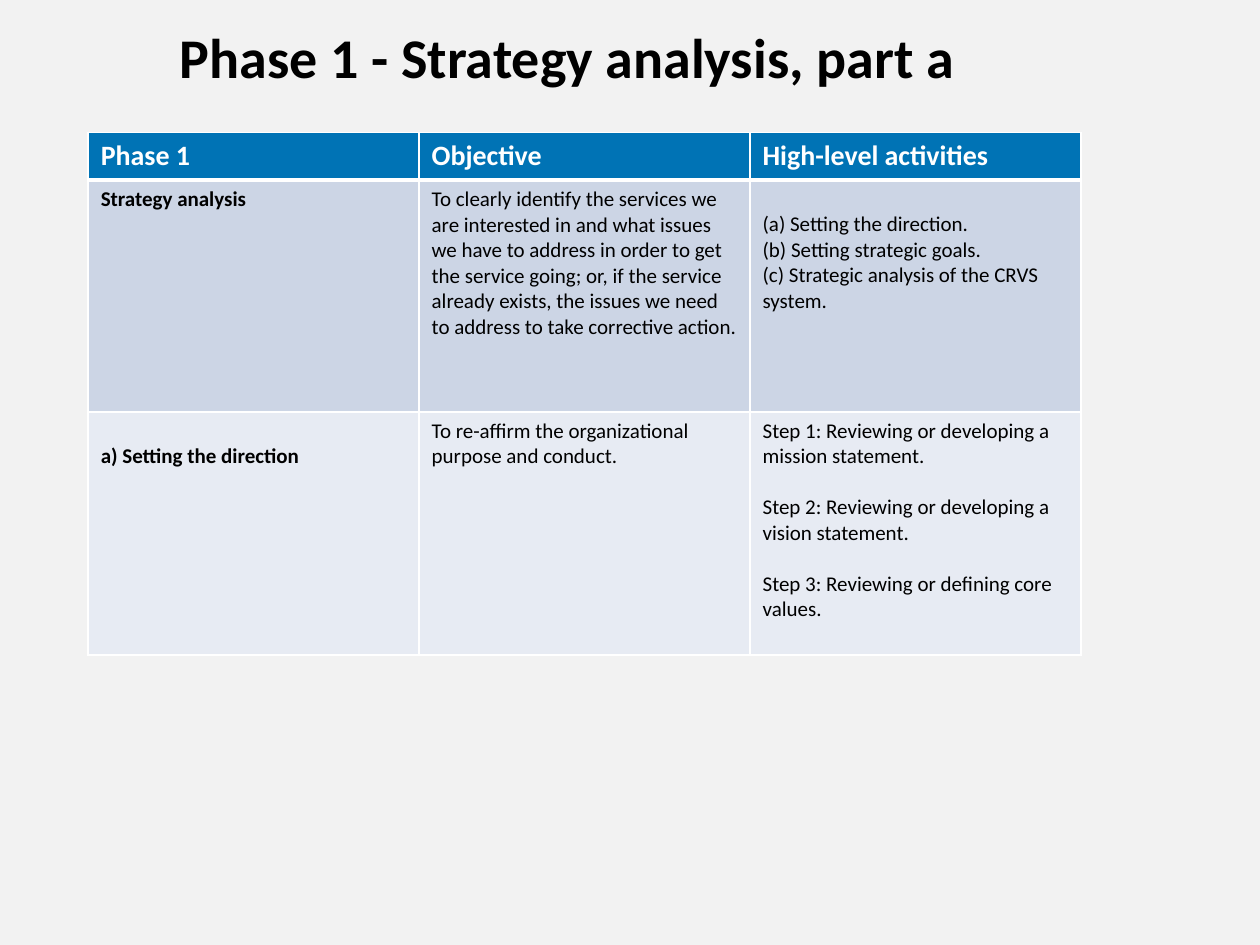
import pptx
import pptx.dml.color
import pptx.oxml
import pptx.oxml.ns
import pptx.util

Inches, Pt = pptx.util.Inches, pptx.util.Pt
RGBColor = pptx.dml.color.RGBColor

FONT = "Calibri"
BACKGROUND = RGBColor(0xF2, 0xF2, 0xF2)
BLACK = RGBColor(0, 0, 0)
WHITE = RGBColor(0xFF, 0xFF, 0xFF)
HEADER_BLUE = RGBColor(0x00, 0x73, 0xB5)
BAND_DARK = RGBColor(0xCC, 0xD5, 0xE5)
BAND_LIGHT = RGBColor(0xE7, 0xEB, 0xF3)

LINE = 0.2  # height of one 12 pt line, in inches
ROW_HEIGHTS = [0.38, 1.84, 1.93]
ROW_FILLS = [HEADER_BLUE, BAND_DARK, BAND_LIGHT]

# Each cell is a list of paragraphs
ROWS = [
    [["Phase 1"], ["Objective"], ["High-level activities"]],
    [
        ["Strategy analysis"],
        ["To clearly identify the services we are interested in and what "
         "issues we have to address in order to get the service going; or, "
         "if the service already exists, the issues we need to address to "
         "take corrective action."],
        ["(a) Setting the direction.",
         "(b) Setting strategic goals.",
         "(c) Strategic analysis of the CRVS system."],
    ],
    [
        ["a) Setting the direction"],
        ["To re-affirm the organizational purpose and conduct."],
        ["Step 1: Reviewing or developing a mission statement.",
         "Step 2: Reviewing or developing a vision statement.",
         "Step 3: Reviewing or defining core values."],
    ],
]
LOWERED_CELLS = {(1, 2), (2, 0)}  # text starts one line down
SPACED_CELL = (2, 2)  # one line between steps


def format_run(r, size, color, bold):
    r.font.name = FONT
    r.font.size = Pt(size)
    r.font.color.rgb = color
    r.font.bold = bold


def set_borders(cell, widths):
    """Draw white borders; widths are in points: left, right, top, bottom."""
    tc_pr = cell._tc.get_or_add_tcPr()
    for side, width in zip("LRTB", widths):
        tc_pr.append(pptx.oxml.parse_xml(
            f'<a:ln{side} {pptx.oxml.ns.nsdecls("a")} w="{Pt(width)}">'
            f'<a:solidFill><a:srgbClr val="{WHITE}"/></a:solidFill>'
            f'</a:ln{side}>'))


def add_title(slide, left, top, width, height):
    sp = slide.shapes.add_textbox(left, top, width, height)
    tf = sp.text_frame
    tf.word_wrap = False
    tf.text = "Phase 1 - Strategy analysis, part a"
    format_run(tf.paragraphs[0].runs[0], 32, BLACK, True)


def fill_cell(cell, row, col, paragraphs):
    header = row == 0
    # The header rule is heavier, on both sides of the shared edge
    set_borders(cell, [1, 1, 3 if row == 1 else 1, 3 if header else 1])
    cell.fill.solid()
    cell.fill.fore_color.rgb = ROW_FILLS[row]
    if (row, col) in LOWERED_CELLS:
        cell.margin_top = Inches(0.05 + LINE)

    tf = cell.text_frame
    tf.text = "\n".join(paragraphs)
    for i, p in enumerate(tf.paragraphs):
        if i and (row, col) == SPACED_CELL:
            p.space_before = Inches(LINE)
        format_run(p.runs[0], 16 if header else 12,
                   WHITE if header else BLACK, header or col == 0)


def add_phase_table(slide, left, top, width, height):
    table = slide.shapes.add_table(
        len(ROWS), len(ROWS[0]), left, top, width, height).table
    for column in table.columns:
        column.width = width // len(ROWS[0])
    for row, cells in enumerate(ROWS):
        table.rows[row].height = Inches(ROW_HEIGHTS[row])
        for col, paragraphs in enumerate(cells):
            fill_cell(table.cell(row, col), row, col, paragraphs)


def main():
    prs = pptx.Presentation()
    prs.slide_width, prs.slide_height = Inches(10), Inches(7.5)
    slide = prs.slides.add_slide(prs.slide_layouts[6])
    slide.background.fill.solid()
    slide.background.fill.fore_color.rgb = BACKGROUND

    # Phase overview
    add_phase_table(slide, Inches(0.7), Inches(1.05),
                    Inches(7.88), Inches(sum(ROW_HEIGHTS)))
    # Title
    add_title(slide, Inches(1.33), Inches(0.13), Inches(6.36), Inches(0.64))
    prs.save("out.pptx")


if __name__ == "__main__":
    main()
